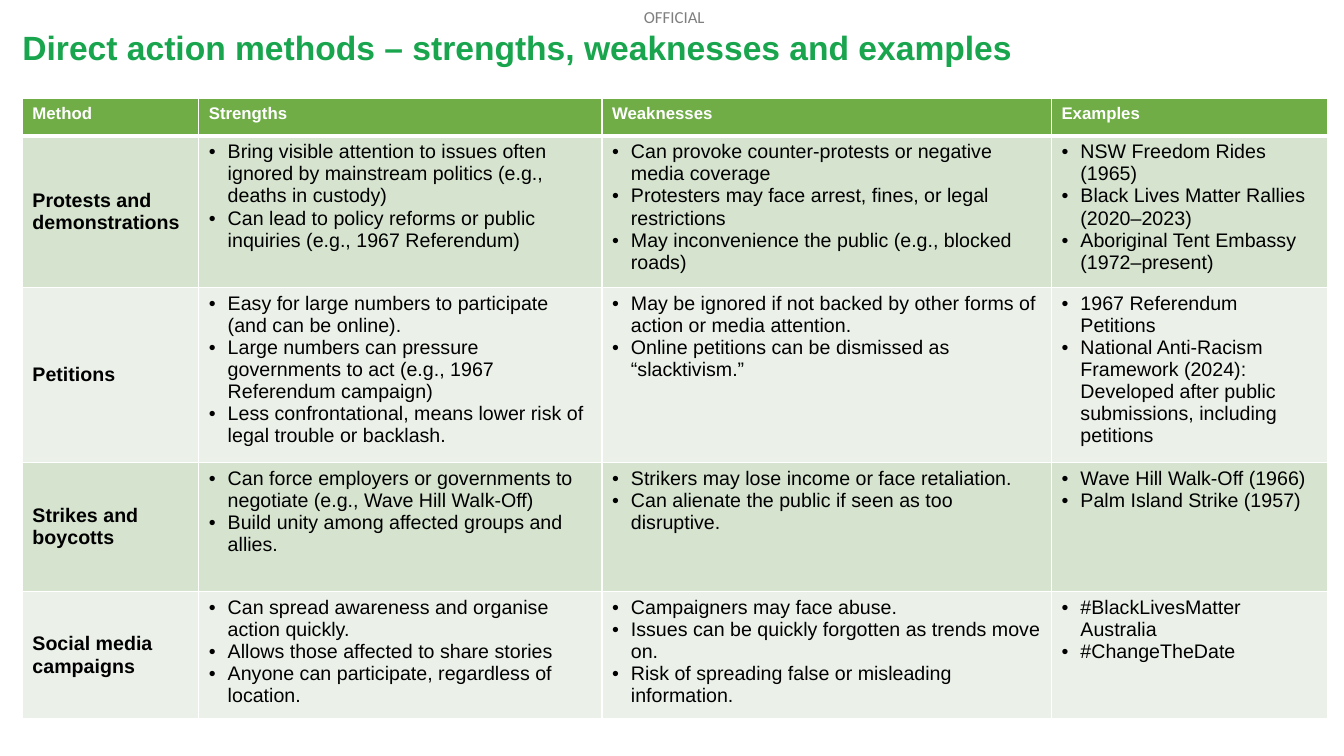
"""Builds a slide comparing direct action methods in a table."""
from lxml.etree import SubElement
from pptx import Presentation
from pptx.dml.color import RGBColor
from pptx.enum.text import MSO_ANCHOR as Anchor, PP_ALIGN as Align
from pptx.oxml.ns import qn
from pptx.util import Pt

HEADINGS = ["Method", "Strengths", "Weaknesses", "Examples"]
METHODS = [
    ("Protests and demonstrations",
     ["Bring visible attention to issues often ignored by mainstream politics (e.g., deaths in custody)",
      "Can lead to policy reforms or public inquiries (e.g., 1967 Referendum)"],
     ["Can provoke counter-protests or negative media coverage",
      "Protesters may face arrest, fines, or legal restrictions",
      "May inconvenience the public (e.g., blocked roads)"],
     ["NSW Freedom Rides (1965)",
      "Black Lives Matter Rallies (2020–2023)",
      "Aboriginal Tent Embassy (1972–present)"]),
    ("Petitions",
     ["Easy for large numbers to participate (and can be online).",
      "Large numbers can pressure governments to act (e.g., 1967 Referendum campaign)",
      "Less confrontational, means lower risk of legal trouble or backlash."],
     ["May be ignored if not backed by other forms of action or media attention.",
      "Online petitions can be dismissed as “slacktivism.”"],
     ["1967 Referendum Petitions",
      "National Anti-Racism Framework (2024): Developed after public submissions, including petitions"]),
    ("Strikes and boycotts",
     ["Can force employers or governments to negotiate (e.g., Wave Hill Walk-Off)",
      "Build unity among affected groups and allies."],
     ["Strikers may lose income or face retaliation.",
      "Can alienate the public if seen as too disruptive."],
     ["Wave Hill Walk-Off (1966)", "Palm Island Strike (1957)"]),
    ("Social media campaigns",
     ["Can spread awareness and organise action quickly.",
      "Allows those affected to share stories",
      "Anyone can participate, regardless of location."],
     ["Campaigners may face abuse.",
      "Issues can be quickly forgotten as trends move on.",
      "Risk of spreading false or misleading information."],
     ["#BlackLivesMatter Australia", "#ChangeTheDate"]),
]
COLUMN_WIDTHS = [126, 288, 321.1, 197.3]
ROW_HEIGHTS = [26.6, 92.2, 92.2, 92.2, 81.4]


def colour(code):
    return RGBColor.from_string(code)


def write(frame, lines, size=14, font="Arial", ink="000000", bold=False,
          bullet=False, align=Align.LEFT, spacing=None):
    for index, line in enumerate(lines):
        paragraph = frame.add_paragraph() if index else frame.paragraphs[0]
        if bullet:
            properties = paragraph._p.get_or_add_pPr()
            properties.set("marL", str(Pt(13.5)))
            properties.set("indent", str(-Pt(13.5)))
            SubElement(properties, qn("a:buFont"), typeface="Arial")
            SubElement(properties, qn("a:buChar"), char="•")
        paragraph.alignment = align
        if spacing:
            paragraph.line_spacing = spacing
        run = paragraph.add_run()
        run.text = line
        run.font.size, run.font.name, run.font.bold = Pt(size), font, bold
        run.font.color.rgb = colour(ink)


class MethodsSlide:
    header_fill = "70AD47"
    row_fills = ["D5E3CF", "EBF1E9"]
    border = "FFFFFF"

    def __init__(self, deck):
        self.slide = deck.slides.add_slide(deck.slide_layouts[6])

    def label(self, line, left, top, width, height, wrap=True, **style):
        frame = self.slide.shapes.add_textbox(
            Pt(left), Pt(top), Pt(width), Pt(height)).text_frame
        frame.word_wrap = wrap
        frame.margin_left = frame.margin_right = 0
        frame.margin_top = frame.margin_bottom = 0
        write(frame, [line], **style)

    def cell(self, cell, lines, fill, top=1, bottom=1, anchor=Anchor.TOP, **style):
        properties = cell._tc.get_or_add_tcPr()
        for side, weight in zip("LRTB", (1, 1, top, bottom)):
            line = SubElement(properties, qn("a:ln" + side), w=str(Pt(weight)))
            SubElement(SubElement(line, qn("a:solidFill")),
                       qn("a:srgbClr"), val=self.border)
        cell.fill.solid()
        cell.fill.fore_color.rgb = colour(fill)
        cell.vertical_anchor = anchor
        write(cell.text_frame, lines, **style)

    def table(self, left, top):
        grid = self.slide.shapes.add_table(
            len(ROW_HEIGHTS), len(COLUMN_WIDTHS), Pt(left), Pt(top),
            Pt(sum(COLUMN_WIDTHS)), Pt(sum(ROW_HEIGHTS))).table
        for column, width in zip(grid.columns, COLUMN_WIDTHS):
            column.width = Pt(width)
        for row, height in zip(grid.rows, ROW_HEIGHTS):
            row.height = Pt(height)
        for column, heading in enumerate(HEADINGS):
            self.cell(grid.cell(0, column), [heading], self.header_fill,
                      bottom=3, size=12, ink="FFFFFF", bold=True)
        for row, (method, *points) in enumerate(METHODS, 1):
            fill = self.row_fills[(row - 1) % 2]
            top_weight = 3 if row == 1 else 1
            self.cell(grid.cell(row, 0), [method], fill, top=top_weight,
                      anchor=Anchor.MIDDLE, bold=True)
            for column, lines in enumerate(points, 1):
                self.cell(grid.cell(row, column), lines, fill,
                          top=top_weight, bullet=True)


def main():
    deck = Presentation()
    deck.slide_width, deck.slide_height = Pt(960), Pt(540)
    page = MethodsSlide(deck)
    page.label("OFFICIAL", 458.6, 5, 46.1, 14.4, wrap=False, size=12,
               font="Calibri", ink="7F7F7F", align=Align.CENTER)
    page.label("Direct action methods – strengths, weaknesses and examples",
               16, 22.3, 862, 69, size=24, ink="18A54D", bold=True, spacing=0.9)
    page.table(16, 70.6)
    deck.save("out.pptx")


if __name__ == "__main__":
    main()
